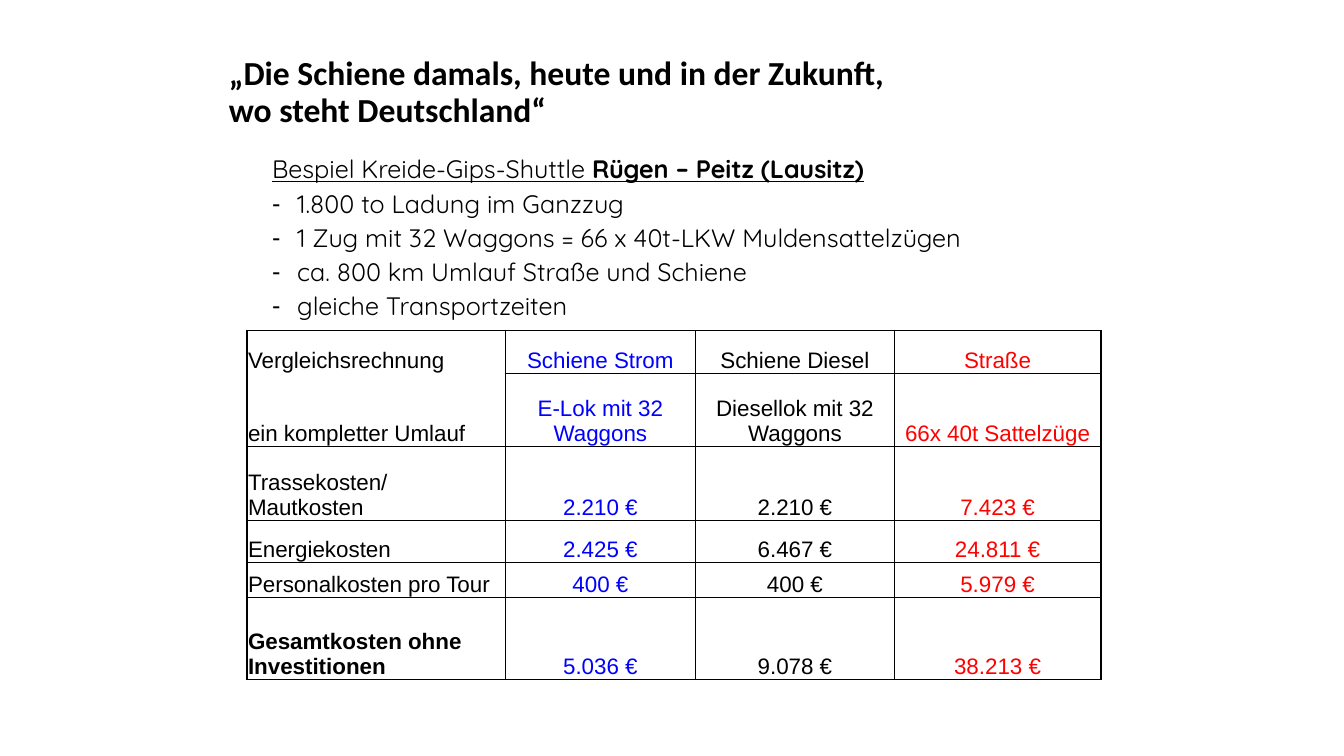
from lxml.etree import SubElement
from pptx import Presentation
from pptx.dml.color import RGBColor
from pptx.enum.text import MSO_ANCHOR, PP_ALIGN
from pptx.oxml.ns import qn
from pptx.util import Inches, Pt

INK = {"black": "000000", "blue": "0000FF", "red": "FF0000"}


def style(run, name, size, ink="black", **more):
    look = {"name": name, "size": Pt(size), "bold": False, **more}
    for key, value in look.items():
        setattr(run.font, key, value)
    run.font.color.rgb = RGBColor.from_string(INK[ink])


def edge(cell, side, width):
    line = SubElement(cell._tc.get_or_add_tcPr(), qn(f"a:ln{side}"), w=str(Pt(width)))
    if width:
        fill = SubElement(line, qn("a:solidFill"))
        SubElement(fill, qn("a:srgbClr"), val=INK["black"])
    else:
        SubElement(line, qn("a:noFill"))


deck = Presentation()
deck.slide_width, deck.slide_height = Inches(13.33), Inches(7.5)
slide = deck.slides.add_slide(deck.slide_layouts[5])

title = slide.shapes.title
place = {"left": 2.17, "top": 0.3, "width": 9, "height": 1.25}
for key, value in place.items():
    setattr(title, key, Inches(value))
frame = title.text_frame
frame.text = "„Die Schiene damals, heute und in der Zukunft, \vwo steht Deutschland“"
frame.vertical_anchor = MSO_ANCHOR.MIDDLE
para = frame.paragraphs[0]
para.alignment, para.line_spacing = PP_ALIGN.LEFT, 0.9
for run in para.runs:
    style(run, "Calibri", 24, bold=True)

points = [
    [("Bespiel Kreide-Gips-Shuttle ", {"underline": True}),
     ("Rügen – Peitz (Lausitz)", {"underline": True, "bold": True})],
    [("1.800 to Ladung im Ganzzug", {})],
    [("1 Zug mit 32 Waggons = 66 x 40t-LKW Muldensattelzügen", {})],
    [("ca. 800 km Umlauf Straße und Schiene", {})],
    [("gleiche Transportzeiten", {})],
]
box = slide.shapes.add_textbox(Inches(2.1), Inches(1.51), Inches(9.37), Inches(1.77))
frame = box.text_frame
frame.word_wrap = True
for i, parts in enumerate(points):
    para = frame.add_paragraph() if i else frame.paragraphs[0]
    para.line_spacing, para.space_before = 0.9, Pt(5)
    for text, look in parts:
        run = para.add_run()
        run.text = text
        style(run, "Quicksand", 18, **look)
    props = para._p.get_or_add_pPr()
    props.set("marL", str(Inches(0.75 if i else 0.5)))
    props.set("indent", str(Inches(-0.25 if i else 0)))
    if i:
        SubElement(props, qn("a:buFont"), typeface="Arial")
        SubElement(props, qn("a:buChar"), char="-")

rows = [
    ("Vergleichsrechnung", "Schiene Strom", "Schiene Diesel", "Straße"),
    ("ein kompletter Umlauf", "E-Lok mit 32 Waggons", "Diesellok mit 32 Waggons",
     "66x 40t Sattelzüge"),
    ("Trassekosten/ Mautkosten", "2.210 €", "2.210 €", "7.423 €"),
    ("Energiekosten", "2.425 €", "6.467 €", "24.811 €"),
    ("Personalkosten pro Tour", "400 €", "400 €", "5.979 €"),
    ("Gesamtkosten ohne Investitionen", "5.036 €", "9.078 €", "38.213 €"),
]
wides = [2.56, 1.89, 1.97, 2.05]
highs = [0.42, 0.73, 0.73, 0.42, 0.35, 0.81]
inks = ["black", "blue", "black", "red"]
uprights = [1, 1, 0.5, 1, 1]
levels = [1, 0.5, 1, 0.5, 0.5, 1, 1]
pads = {"margin_left": 0.01, "margin_right": 0.01, "margin_top": 0.01, "margin_bottom": 0}

table = slide.shapes.add_table(
    len(rows), len(wides), Inches(2.45), Inches(3.28), Inches(8.47), Inches(3.46)).table
table.first_row = table.horz_banding = False
for col, wide in zip(table.columns, wides):
    col.width = Inches(wide)
for row, high in zip(table.rows, highs):
    row.height = Inches(high)

for r, texts in enumerate(rows):
    for c, text in enumerate(texts):
        cell = table.cell(r, c)
        for key, value in pads.items():
            setattr(cell, key, Inches(value))
        cell.vertical_anchor = MSO_ANCHOR.BOTTOM
        para = cell.text_frame.paragraphs[0]
        para.alignment = PP_ALIGN.CENTER if c else PP_ALIGN.LEFT
        run = para.add_run()
        run.text = text
        style(run, "Arial", 16, inks[c], bold=c == 0 and r == len(rows) - 1)
        top, base = [0 if c == 0 and y == 1 else levels[y] for y in (r, r + 1)]
        sides = {"L": uprights[c], "R": uprights[c + 1], "T": top, "B": base}
        for side, width in sides.items():
            edge(cell, side, width)
        cell.fill.background()

deck.save("out.pptx")
